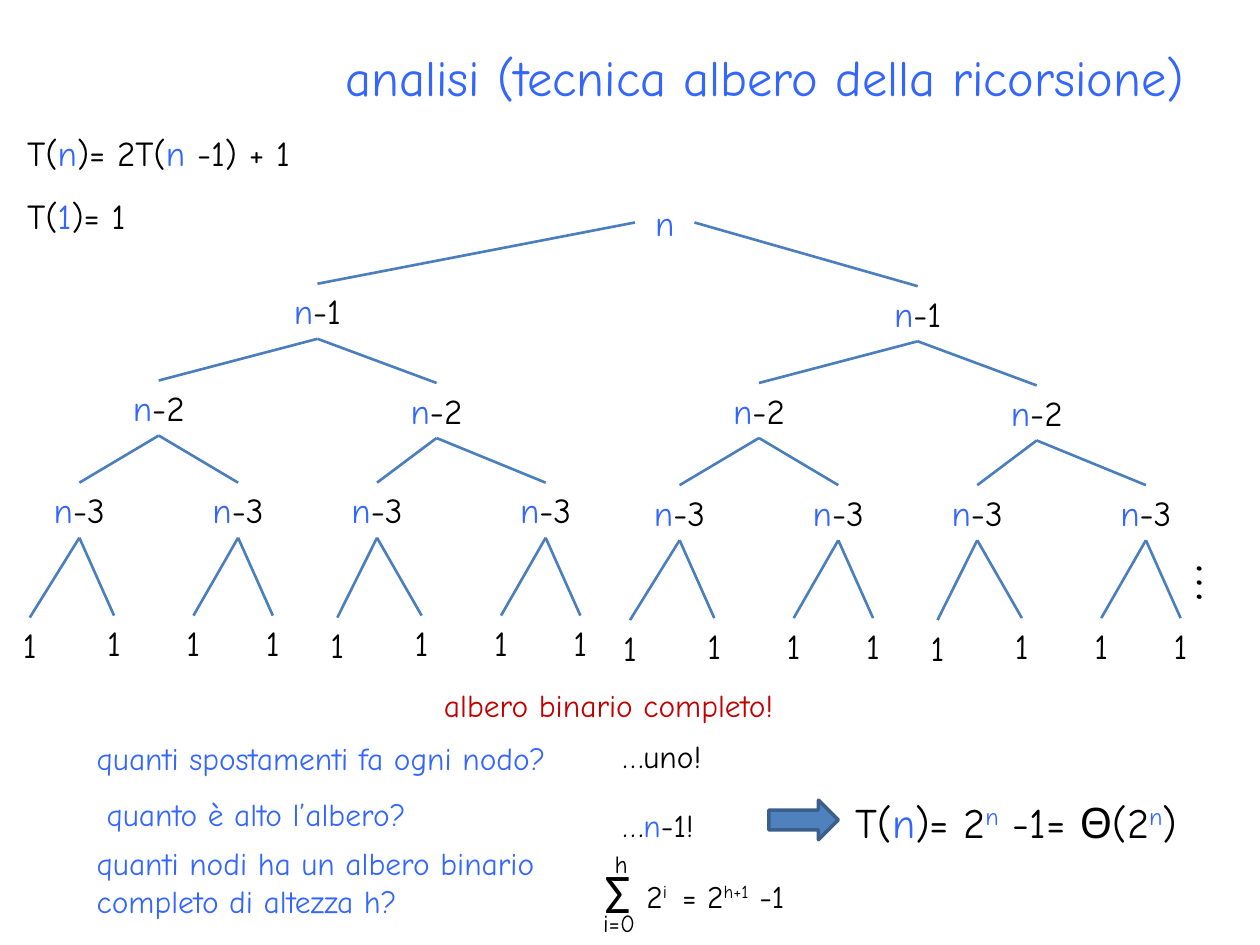
"""Build a slide that analyses a recurrence with its recursion tree."""

from lxml import etree
from pptx import Presentation
from pptx.dml.color import RGBColor
from pptx.enum.shapes import MSO_CONNECTOR, MSO_SHAPE
from pptx.enum.text import MSO_ANCHOR, PP_ALIGN
from pptx.oxml.ns import qn
from pptx.util import Cm, Pt

STRAIGHT = MSO_CONNECTOR.STRAIGHT
RIGHT_ARROW = MSO_SHAPE.RIGHT_ARROW
MIDDLE = MSO_ANCHOR.MIDDLE
LEFT, CENTER, RIGHT = PP_ALIGN.LEFT, PP_ALIGN.CENTER, PP_ALIGN.RIGHT

BLUE = RGBColor(0x33, 0x66, 0xFF)
BLACK = RGBColor(0x00, 0x00, 0x00)
RED = RGBColor(0xC0, 0x00, 0x00)
BRANCH = RGBColor(0x4B, 0x7E, 0xBC)
ARROW_FILL = RGBColor(0x4F, 0x81, 0xBD)
ARROW_LINE = RGBColor(0x3A, 0x5F, 0x8C)

FONT = "Comic Neue"
N = ("n", BLUE, False)
N_RAISED = ("n", BLUE, True)
NODE_HEIGHT = 1.11


def write(box, *spans, size=18, font=FONT, align=LEFT, wrap=True):
    """Fill a box with (text, colour, raised) spans."""
    box.text_frame.word_wrap = wrap
    para = box.text_frame.paragraphs[0]
    para.alignment = align
    for text, color, raised in spans:
        span = para.add_run()
        span.text = text
        span.font.size = Pt(size)
        span.font.name = font
        span.font.color.rgb = color
        if raised:
            span.font._element.set("baseline", "30000")
    return box


def branch(page, *ends):
    """Draw a tree branch between two points given in centimetres."""
    line = page.shapes.add_connector(STRAIGHT, *[Cm(end) for end in ends])
    line.line.color.rgb = BRANCH
    line.line.width = Pt(1.5)
    etree.SubElement(line._element.spPr, qn("a:effectLst"))


deck = Presentation()
deck.slide_width, deck.slide_height = Cm(25.4), Cm(19.05)
page = deck.slides.add_slide(deck.slide_layouts[5])

title = page.shapes.title
title.left, title.top, title.width, title.height = Cm(1.27), Cm(0.76), Cm(22.86), Cm(1.55)
title.text_frame.vertical_anchor = MIDDLE
write(title, ("analisi (tecnica albero della ricorsione)", BLUE, False), size=28.8, align=RIGHT)

root_center, root_top, root_width = 13.4, 3.93, 1.2
root = page.shapes.add_textbox(
    Cm(root_center - root_width / 2), Cm(root_top), Cm(root_width), Cm(NODE_HEIGHT)
)
write(root, N, size=20, align=CENTER)

levels = [
    (2.8, [N, ("-1", BLACK, False)], [(6.4, 5.72)]),
    (2.8, [N, ("-2", BLACK, False)], [(3.2, 7.67), (8.8, 7.72)]),
    (2.8, [N, ("-3", BLACK, False)], [(x, 9.73) for x in (1.6, 4.8, 7.6, 11)]),
    (
        1.8,
        [("1", BLACK, False)],
        [(0.6, 12.45), (2.3, 12.41), (3.9, 12.41), (5.5, 12.41),
         (6.8, 12.45), (8.5, 12.41), (10.1, 12.41), (11.7, 12.41)],
    ),
]
for side, shift, drop in ((-1, 0, 0), (1, 12.1, 0.05)):
    parents = []
    for width, label, places in levels:
        nodes = [(x + shift, y + drop) for x, y in places]
        for index, (center, top) in enumerate(nodes):
            node = page.shapes.add_textbox(
                Cm(center - width / 2), Cm(top), Cm(width), Cm(NODE_HEIGHT)
            )
            write(node, *label, size=20, align=CENTER)
            if parents:
                parent_center, parent_top = parents[index // 2]
                branch(page, parent_center, parent_top + NODE_HEIGHT, center, top)
            else:
                root_edge = root_center + side * root_width / 2
                branch(page, root_edge, root_top + NODE_HEIGHT / 2, center, top)
        parents = nodes

notes = [
    (0.3, 2.52, 8.5, 1.11, 20,
     [("T(", BLACK, False), N, (")= 2T(", BLACK, False), N, (" -1) + 1", BLACK, False)]),
    (0.3, 3.8, 3.2, 1.11, 20,
     [("T(", BLACK, False), ("1", BLUE, False), (")= 1", BLACK, False)]),
    (8.7, 13.7, 8.8, 1.03, 18, [("albero binario completo!", RED, False)]),
    (1.7, 14.78, 10.8, 1.03, 18, [("quanti spostamenti fa ogni nodo?", BLUE, False)]),
    (12.3, 14.73, 2.2, 1.03, 18, [("…uno!", BLACK, False)]),
    (1.9, 15.9, 7.8, 1.03, 18, [("quanto è alto l’albero?", BLUE, False)]),
    (12.3, 16.13, 2.2, 1.03, 18, [("…", BLACK, False), N, ("-1!", BLACK, False)]),
    (1.7, 16.9, 9.4, 1.8, 18,
     [("quanti nodi ha un albero binario completo di altezza h?", BLUE, False)]),
    (12.78, 17.55, 1.2, 1.03, 18, [("2", BLACK, False), ("i", BLACK, True)]),
    (13.5, 17.55, 3.4, 1.03, 18,
     [("= 2", BLACK, False), ("h+1", BLACK, True), (" -1", BLACK, False)]),
    (11.91, 18.19, 1.2, 0.85, 14, [("i=0", BLACK, False)]),
    (12.14, 17, 1.2, 0.85, 14, [("h", BLACK, False)]),
    (17, 15.93, 7.9, 1.28, 24,
     [("T(", BLACK, False), N, (")= 2", BLACK, False), N_RAISED,
      (" -1= Θ(2", BLACK, False), N_RAISED, (")", BLACK, False)]),
]
for left, top, width, height, size, spans in notes:
    box = page.shapes.add_textbox(Cm(left), Cm(top), Cm(width), Cm(height))
    write(box, *spans, size=size)

dots = page.shapes.add_textbox(Cm(24.08), Cm(10.82), Cm(1), Cm(1.62))
dots.rotation = 90
write(dots, ("…", BLACK, False), size=32)

sigma = page.shapes.add_textbox(Cm(11.94), Cm(17.17), Cm(1.2), Cm(1.62))
write(sigma, ("Σ", BLACK, False), size=32, font="Calibri", wrap=False)

arrow = page.shapes.add_shape(RIGHT_ARROW, Cm(15.5), Cm(16.13), Cm(1.4), Cm(0.8))
arrow.shadow.inherit = False
arrow.fill.solid()
arrow.fill.fore_color.rgb = ARROW_FILL
arrow.line.color.rgb = ARROW_LINE
arrow.line.width = Pt(2)

deck.save("out.pptx")
